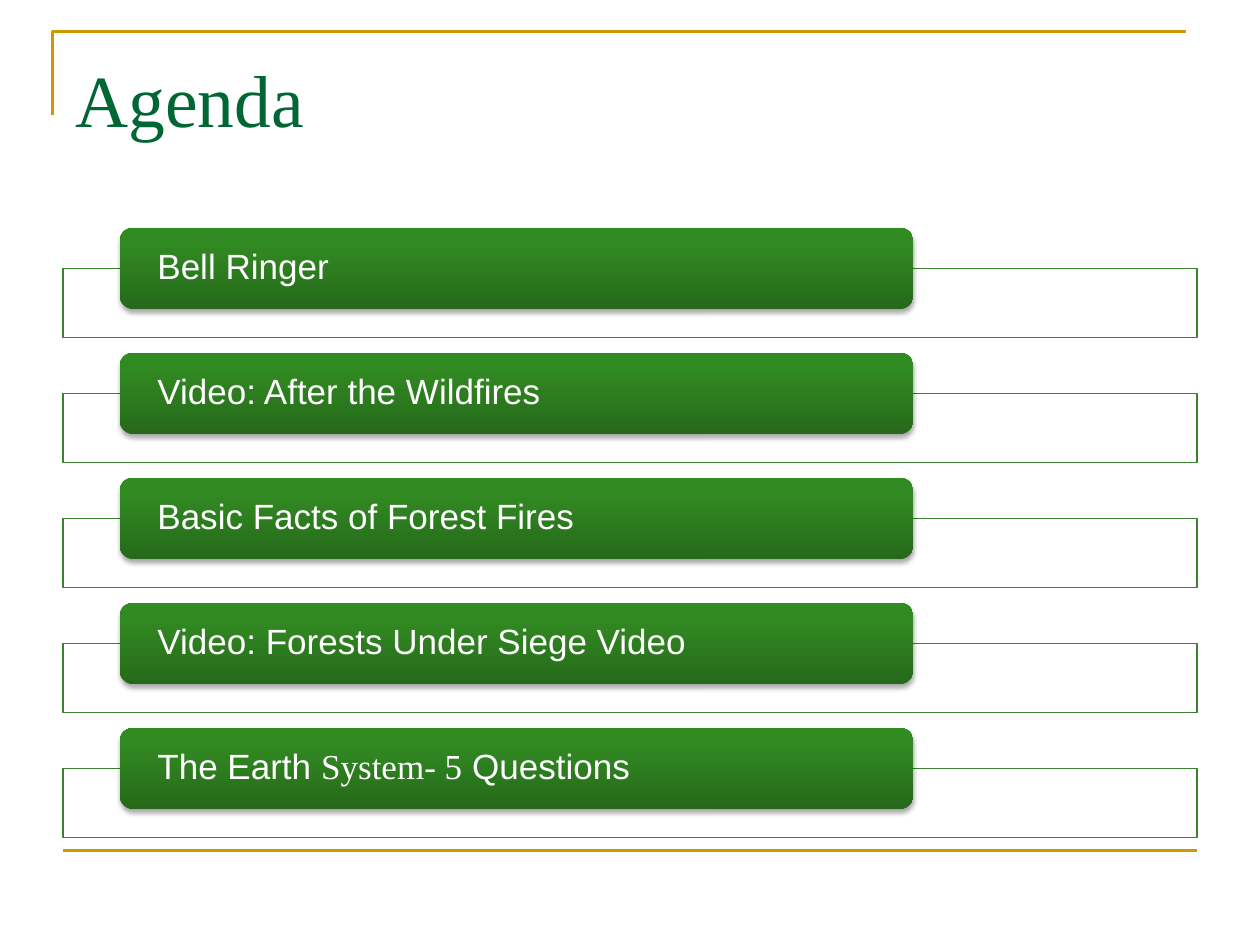
from lxml import etree
from pptx import Presentation
from pptx.dml.color import RGBColor
from pptx.enum import shapes, text
from pptx.oxml import parse_xml
from pptx.oxml.ns import nsdecls, qn
from pptx.util import Pt

COLORS = {
    "gold": "CC9900", "title": "006633", "white": "FFFFFF", "frame": "3B812F",
    "dark": "26691A", "mid": "318922", "light": "308C20", "shadow": "000000",
}
SANS, SERIF = "Arial", "Times New Roman"
AGENDA = [
    [("Bell Ringer", SANS)],
    [("Video: After the Wildfires", SANS)],
    [("Basic Facts of Forest Fires", SANS)],
    [("Video: Forests Under Siege Video", SANS)],
    [("The Earth ", SANS), ("System- 5", SERIF), (" Questions", SANS)],
]


def rgb(name):
    return RGBColor.from_string(COLORS[name])


def set_line(s, color, width):
    s.line.color.rgb = rgb(color)
    s.line.width = Pt(width)


def add_rules(slide, x, y, w, h):
    """Gold corner rule above the title and gold rule along the bottom."""
    fb = slide.shapes.build_freeform(Pt(x - 6), Pt(y + 48))
    fb.add_line_segments([(Pt(x - 6), Pt(y)), (Pt(x + w - 6), Pt(y))], close=False)
    corner = fb.convert_to_shape()
    corner.shadow.inherit = False
    corner.fill.background()
    set_line(corner, "gold", 1.5)

    rule = slide.shapes.add_connector(
        shapes.MSO_CONNECTOR.STRAIGHT, Pt(x), Pt(y + h), Pt(x + w), Pt(y + h))
    etree.SubElement(rule._element.spPr, qn("a:effectLst"))
    set_line(rule, "gold", 1.5)


def add_title(slide, x, y, w, h, title):
    tf = slide.shapes.add_textbox(Pt(x), Pt(y), Pt(w), Pt(h)).text_frame
    tf.word_wrap = True
    tf.margin_top = Pt(9)
    p = tf.paragraphs[0]
    p.text = title
    p.font.name, p.font.size = SERIF, Pt(42)
    p.font.color.rgb = rgb("title")


def style_tab(s):
    """Vertical green gradient, no outline, soft shadow below."""
    s.line.fill.background()
    s.shadow.inherit = False
    stops = "".join(
        f'<a:gs pos="{pos}000"><a:srgbClr val="{COLORS[c]}"/></a:gs>'
        for pos, c in ((0, "dark"), (80, "mid"), (100, "light")))
    spPr = s._element.spPr
    spPr.find(qn("a:prstGeom")).addnext(parse_xml(
        f'<a:gradFill {nsdecls("a")} rotWithShape="1"><a:gsLst>{stops}</a:gsLst>'
        '<a:lin ang="16200000" scaled="0"/></a:gradFill>'))
    spPr.find(qn("a:effectLst")).append(parse_xml(
        f'<a:outerShdw {nsdecls("a")} blurRad="{Pt(3.1)}" dist="{Pt(1.8)}" '
        f'dir="5400000" rotWithShape="0"><a:srgbClr val="{COLORS["shadow"]}">'
        '<a:alpha val="35000"/></a:srgbClr></a:outerShdw>'))


def add_agenda_item(slide, x, y, w, h, runs):
    """Outlined frame with a green tab overlapping its top edge."""
    tab_h = 46.5
    frame = slide.shapes.add_shape(
        shapes.MSO_SHAPE.RECTANGLE, Pt(x), Pt(y + tab_h / 2), Pt(w), Pt(h - tab_h / 2))
    frame.shadow.inherit = False
    frame.fill.solid()
    frame.fill.fore_color.rgb = rgb("white")
    fill = frame._element.spPr.find(qn("a:solidFill"))
    etree.SubElement(fill[0], qn("a:alpha"), val="90000")
    set_line(frame, "frame", 0.75)

    tab = slide.shapes.add_shape(
        shapes.MSO_SHAPE.ROUNDED_RECTANGLE,
        Pt(x + w * 0.05), Pt(y), Pt(w * 0.7), Pt(tab_h))
    style_tab(tab)
    tf = tab.text_frame
    tf.word_wrap = True
    tf.vertical_anchor = text.MSO_ANCHOR.MIDDLE
    tf.margin_left = tf.margin_right = Pt(19.3)
    tf.margin_top = tf.margin_bottom = 0
    p = tf.paragraphs[0]
    p.alignment = text.PP_ALIGN.LEFT
    p.line_spacing = 0.9
    p.font.size = Pt(20)
    p.font.color.rgb = rgb("white")
    for wording, font in runs:
        r = p.add_run()
        r.text = wording
        r.font.name = font


def add_agenda(slide, x, y, w, h, items):
    item_h = 62.75
    pitch = (h - item_h) / (len(items) - 1)
    for i, runs in enumerate(items):
        add_agenda_item(slide, x, y + i * pitch, w, item_h, runs)


def main():
    prs = Presentation()
    prs.slide_width, prs.slide_height = Pt(720), Pt(540)
    slide = prs.slides.add_slide(prs.slide_layouts[6])
    add_rules(slide, 36, 18, 648, 468)
    add_title(slide, 36, 21.6, 648, 90, "Agenda")
    add_agenda(slide, 36, 130.2, 648, 348.5, AGENDA)
    prs.save("out.pptx")


if __name__ == "__main__":
    main()
